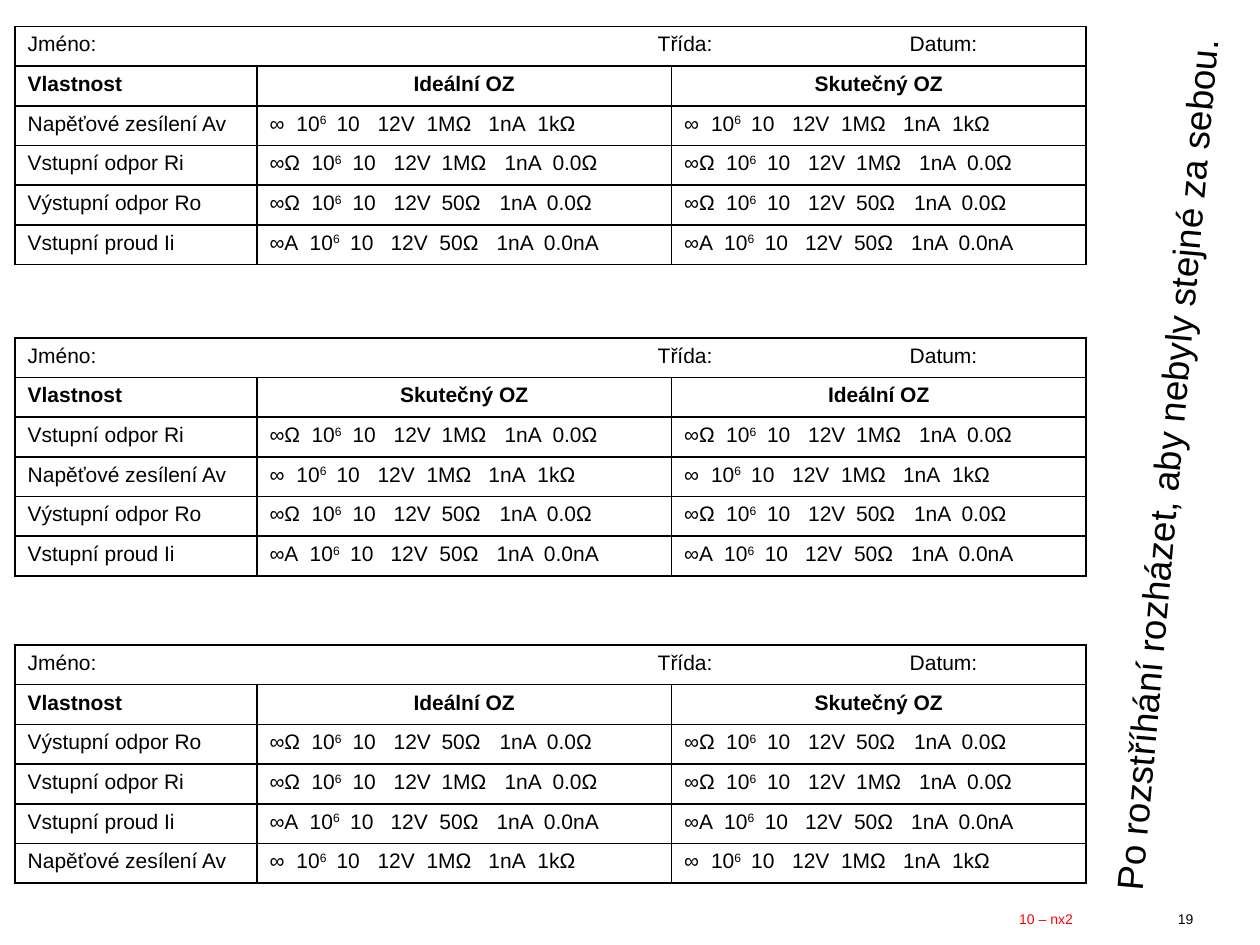
from lxml import etree
from pptx import Presentation
from pptx import util as u
from pptx.dml.color import RGBColor
from pptx.enum import shapes, text
from pptx.oxml import ns

HUES = {"ink": "000000", "paper": "FFFFFF", "note": "FF0000"}
COLS = (138.2, 236.9, 236.9)
ROW = 22.68
LEFT = 8.64
FORM = "Jméno:\tTřída:\tDatum:"
IDEAL, REAL = "Ideální OZ", "Skutečný OZ"

# Row label, choices to circle, tab stops between the choices
ROWS = {
    "Av": ("Napěťové zesílení Av", "∞ 10^6^ 10 12V 1MΩ 1nA 1kΩ",
           (15.4, 38.3, 61.7, 89.7, 125.1, 153.1)),
    "Ri": ("Vstupní odpor Ri", "∞Ω 10^6^ 10 12V 1MΩ 1nA 0.0Ω",
           (24, 47.4, 70.9, 98.3, 134.3, 161.7)),
    "Ro": ("Výstupní odpor Ro", "∞Ω 10^6^ 10 12V 50Ω 1nA 0.0Ω",
           (24, 47.4, 70.9, 98.3, 131.4, 158.5)),
    "Ii": ("Vstupní proud Ii", "∞A 10^6^ 10 12V 50Ω 1nA 0.0nA",
           (22.9, 46.1, 69.1, 97.1, 129.7, 156.8)),
}

# Top edge, column heads, order of the rows
CARDS = (
    (15.1, (IDEAL, REAL), ("Av", "Ri", "Ro", "Ii")),
    (368.6, (IDEAL, REAL), ("Ro", "Ri", "Ii", "Av")),
    (193, (REAL, IDEAL), ("Ri", "Av", "Ro", "Ii")),
)


def hue(name):
    return RGBColor.from_string(HUES[name])


def write(frame, words, size=12, color="ink", bold=False, mid=False, stops=()):
    """Fill the frame with one paragraph; ^x^ marks a superscript."""
    para = frame.paragraphs[0]
    para.alignment = text.PP_ALIGN.CENTER if mid else text.PP_ALIGN.LEFT
    if stops:
        tabs = etree.SubElement(para._p.get_or_add_pPr(), ns.qn("a:tabLst"))
        for pos in stops:
            etree.SubElement(tabs, ns.qn("a:tab"), pos=str(u.Pt(pos)), algn="l")
    for i, part in enumerate(words.split("^")):
        if not part:
            continue
        run = para.add_run()
        run.text = part
        font = run.font
        font.name, font.size, font.bold = "Arial", u.Pt(size), bold
        font.color.rgb = hue(color)
        if i % 2:
            run._r.get_or_add_rPr().set("baseline", "30000")


def frame_cell(cell):
    """Draw a thin line on each side of the cell and clear its fill."""
    props = cell._tc.get_or_add_tcPr()
    for side in "LRTB":
        line = etree.SubElement(props, ns.qn("a:ln" + side), w=str(u.Pt(1)))
        fill = etree.SubElement(line, ns.qn("a:solidFill"))
        etree.SubElement(fill, ns.qn("a:srgbClr"), val=HUES["ink"])
    cell.fill.background()


class Sheet:
    def __init__(self, deck):
        self.slide = deck.slides.add_slide(deck.slide_layouts[6])

    def label(self, words, box, wrap=True, turn=0, **style):
        shape = self.slide.shapes.add_textbox(*map(u.Pt, box))
        shape.rotation = turn
        shape.text_frame.word_wrap = wrap
        write(shape.text_frame, words, **style)

    def block(self, words, box, fill, **style):
        shape = self.slide.shapes.add_shape(
            shapes.MSO_SHAPE.RECTANGLE, *map(u.Pt, box))
        shape.shadow.inherit = False
        shape.fill.solid()
        shape.fill.fore_color.rgb = hue(fill)
        shape.line.fill.background()
        shape.text_frame.vertical_anchor = text.MSO_ANCHOR.TOP
        write(shape.text_frame, words, **style)

    def card(self, top, heads, order):
        count = len(order) + 2
        box = (LEFT, top, sum(COLS), ROW * count)
        grid = self.slide.shapes.add_table(
            count, len(COLS), *map(u.Pt, box)).table
        grid.first_row = grid.horz_banding = False
        for col, width in zip(grid.columns, COLS):
            col.width = u.Pt(width)
        for row in grid.rows:
            row.height = u.Pt(ROW)
        for cell in grid.iter_cells():
            frame_cell(cell)

        grid.cell(0, 0).merge(grid.cell(0, len(COLS) - 1))
        write(grid.cell(0, 0).text_frame, FORM, stops=(360, 504))
        for c, head in enumerate(("Vlastnost", *heads)):
            write(grid.cell(1, c).text_frame, head, bold=True, mid=c > 0)
        for r, key in enumerate(order, 2):
            name, picks, stops = ROWS[key]
            write(grid.cell(r, 0).text_frame, name)
            for c in (1, 2):
                write(grid.cell(r, c).text_frame,
                      picks.replace(" ", "\t"), stops=stops)


def main():
    deck = Presentation()
    deck.slide_width, deck.slide_height = u.Pt(720), u.Pt(540)
    sheet = Sheet(deck)
    sheet.label("19", (666, 517, 23.8, 17.3), wrap=False, size=8)
    sheet.block("10 – nx2", (575.3, 517, 90.7, 17.3), "paper",
                size=8, color="note")
    for card in CARDS:
        sheet.card(*card)
    sheet.label("Po rozstříhání rozházet, aby nebyly stejné za sebou.",
                (410.4, 244.1, 512.6, 32.4), turn=275.1, size=21)
    deck.save("out.pptx")


if __name__ == "__main__":
    main()
